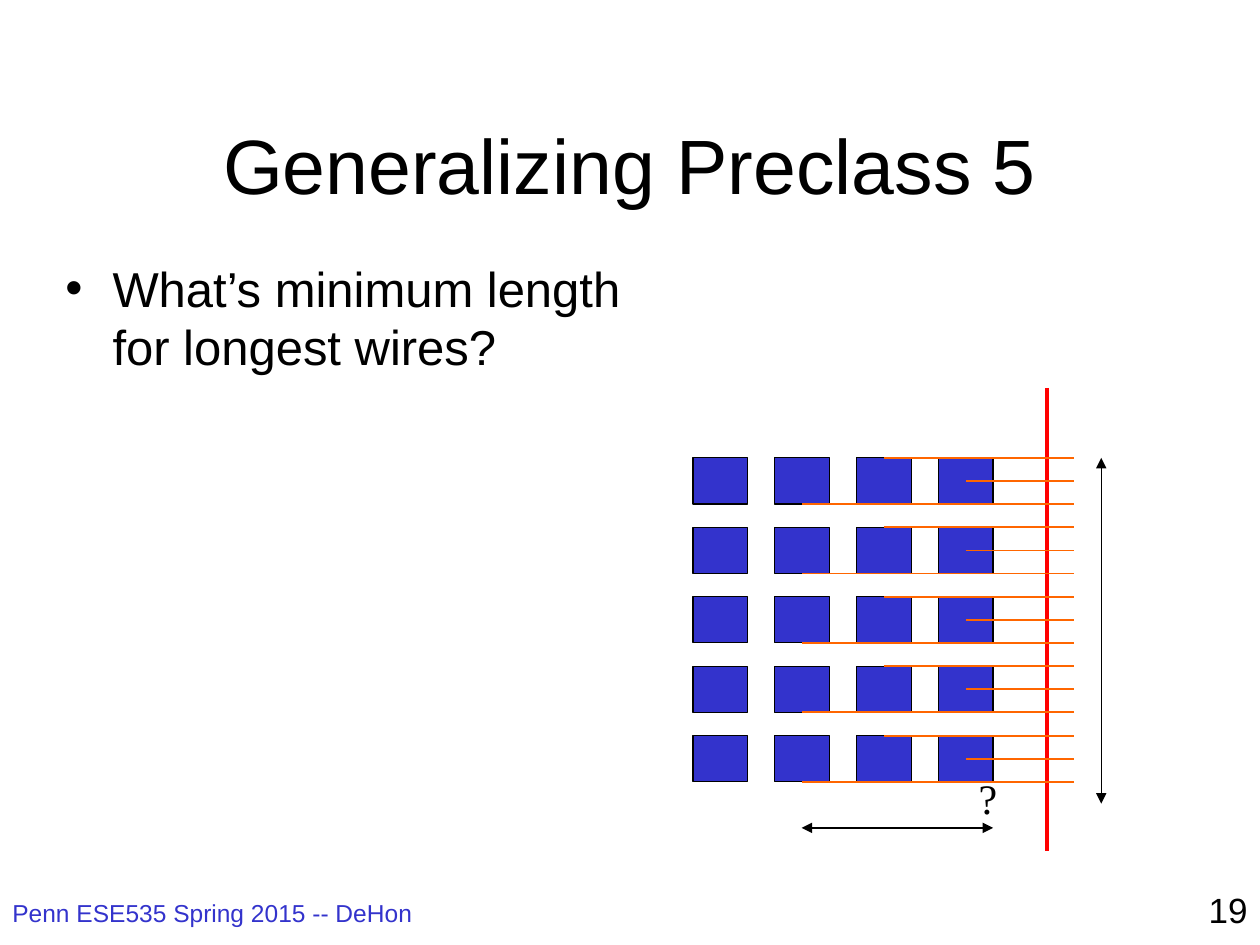
from pptx import Presentation
from pptx.dml.color import RGBColor
from pptx.enum.shapes import MSO_CONNECTOR, MSO_SHAPE
from pptx.enum.text import MSO_ANCHOR, MSO_AUTO_SIZE, PP_ALIGN
from pptx.oxml.ns import qn
from pptx.util import Cm, Pt
from lxml import etree

STRAIGHT = MSO_CONNECTOR.STRAIGHT
RECTANGLE = MSO_SHAPE.RECTANGLE
MIDDLE = MSO_ANCHOR.MIDDLE
NO_FIT = MSO_AUTO_SIZE.NONE
LEFT, CENTER, RIGHT = PP_ALIGN.LEFT, PP_ALIGN.CENTER, PP_ALIGN.RIGHT
TOP_SIDE, BOTTOM_SIDE = 0, 2
TITLE_ONLY = 5

COLUMNS, ROWS = 4, 5
GRID_LEFT, GRID_TOP = 13.97, 9.23
CELL_WIDTH, CELL_HEIGHT = 1.1, 0.93
COLUMN_PITCH, ROW_PITCH = 1.65, 1.4
WIRE_END = 21.65


def color(value):
    return RGBColor.from_string(value)


class SlideBuilder:
    font = "Arial"
    black = "000000"
    blue = "3333CC"
    red = "FF0000"
    orange = "FF6600"

    def __init__(self, page):
        self.page = page

    def fill_text(self, frame, text, size, ink, align, font):
        frame.text = text
        para = frame.paragraphs[0]
        para.alignment = align
        for span in para.runs:
            span.font.name = font or self.font
            span.font.size = Pt(size)
            span.font.color.rgb = color(ink or self.black)
        return para

    def title(self, text, left, top, width, height, size):
        box = self.page.shapes.title
        box.left, box.top = Cm(left), Cm(top)
        box.width, box.height = Cm(width), Cm(height)
        frame = box.text_frame
        frame.auto_size = NO_FIT
        frame.vertical_anchor = MIDDLE
        self.fill_text(frame, text, size, None, CENTER, None)

    def text(self, text, left, top, width, height, size,
             ink=None, align=LEFT, font=None, wrap=True):
        box = self.page.shapes.add_textbox(Cm(left), Cm(top), Cm(width), Cm(height))
        box.text_frame.word_wrap = wrap
        return self.fill_text(box.text_frame, text, size, ink, align, font)

    def bullet(self, text, left, top, width, height, size):
        para = self.text(text, left, top, width, height, size)
        para.space_before = Pt(size * 0.2)
        properties = para._p.get_or_add_pPr()
        indent = Cm(0.95)
        properties.set("marL", str(indent))
        properties.set("indent", str(-indent))
        etree.SubElement(properties, qn("a:buFont"), typeface=self.font)
        etree.SubElement(properties, qn("a:buChar"), char="•")

    def cell(self, left, top):
        box = self.page.shapes.add_shape(
            RECTANGLE, Cm(left), Cm(top), Cm(CELL_WIDTH), Cm(CELL_HEIGHT))
        box.shadow.inherit = False
        box.fill.solid()
        box.fill.fore_color.rgb = color(self.blue)
        box.line.color.rgb = color(self.black)
        box.line.width = Pt(0.75)
        return box

    def line(self, start, end, ink, width, arrows=False):
        connector = self.page.shapes.add_connector(
            STRAIGHT, Cm(start[0]), Cm(start[1]), Cm(end[0]), Cm(end[1]))
        connector.line.color.rgb = color(ink)
        connector.line.width = Pt(width)
        properties = connector._element.spPr
        if arrows:
            outline = properties.find(qn("a:ln"))
            for name in ("a:headEnd", "a:tailEnd"):
                etree.SubElement(outline, qn(name), type="triangle")
        etree.SubElement(properties, qn("a:effectLst"))
        return connector

    def wire(self, column, row, drop, cell=None, side=None):
        x = GRID_LEFT + column * COLUMN_PITCH + CELL_WIDTH / 2
        y = GRID_TOP + row * ROW_PITCH + drop * CELL_HEIGHT
        connector = self.line((x, y), (WIRE_END, y), self.orange, 1)
        if cell is not None:
            connector.begin_connect(cell, side)


def main():
    deck = Presentation()
    deck.slide_width, deck.slide_height = Cm(25.4), Cm(19.05)
    page = deck.slides.add_slide(deck.slide_layouts[TITLE_ONLY])
    builder = SlideBuilder(page)

    builder.text("Penn ESE535 Spring 2015 -- DeHon", 0, 17.98, 9.73, 1.07, 14,
                 ink=builder.blue)
    builder.text("19", 20.12, 17.78, 5.28, 1.27, 20, align=RIGHT)
    builder.title("Generalizing Preclass 5", 1.9, 1.7, 21.6, 3.18, 44)
    builder.bullet("What’s minimum length for longest wires?",
                   1.07, 5.08, 12.9, 11.43, 28)

    cells = {
        (column, row): builder.cell(GRID_LEFT + column * COLUMN_PITCH,
                                    GRID_TOP + row * ROW_PITCH)
        for column in range(COLUMNS) for row in range(ROWS)
    }

    builder.line((21.11, 7.82), (21.11, 17.15), builder.red, 2.25)
    builder.line((22.2, GRID_TOP), (22.2, 16.2), builder.black, 0.75, arrows=True)
    builder.line((16.16, 16.69), (20.02, 16.69), builder.black, 0.75, arrows=True)

    for row in range(ROWS):
        builder.wire(3, row, 0.5)
        builder.wire(2, row, 0, cells[2, row], TOP_SIDE)
        builder.wire(1, row, 1, cells[1, row], BOTTOM_SIDE)

    builder.text("?", 19.48, 15.44, 0.89, 1.27, 24,
                 font="Times New Roman", wrap=False)

    deck.save("out.pptx")


if __name__ == "__main__":
    main()
